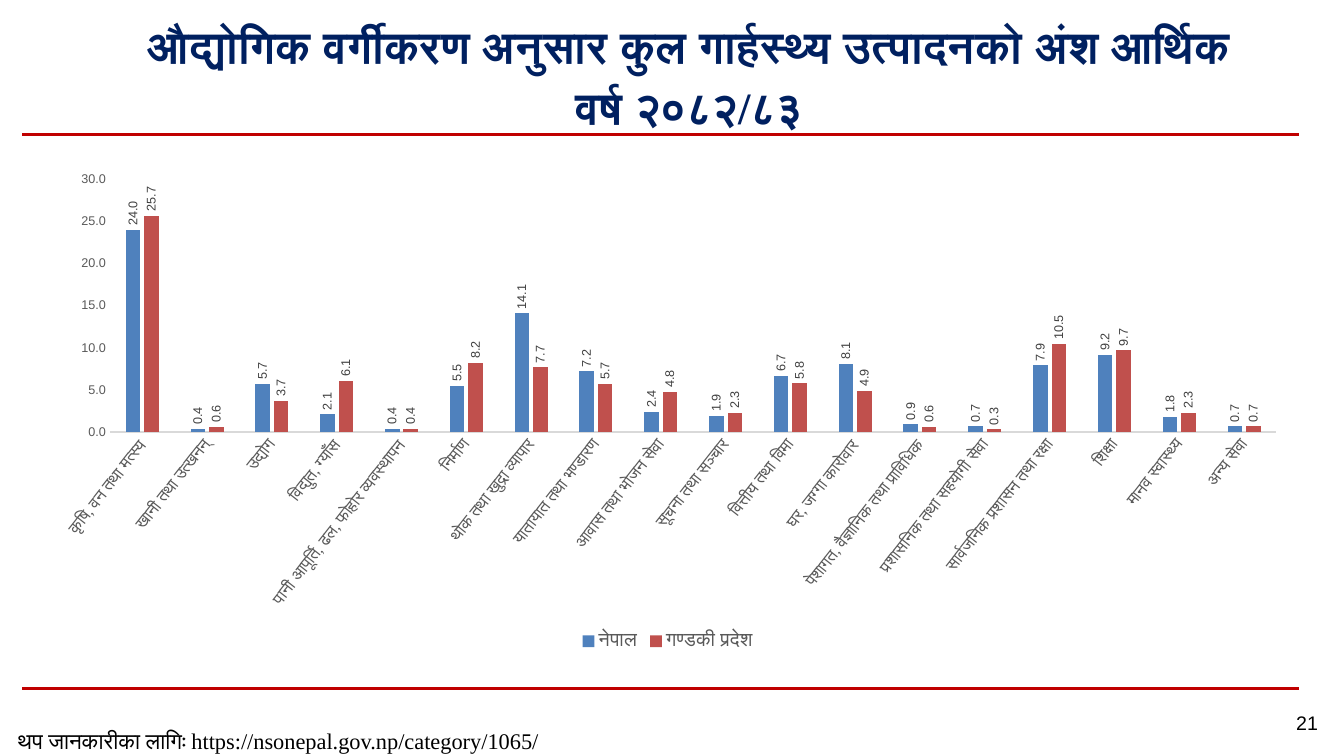
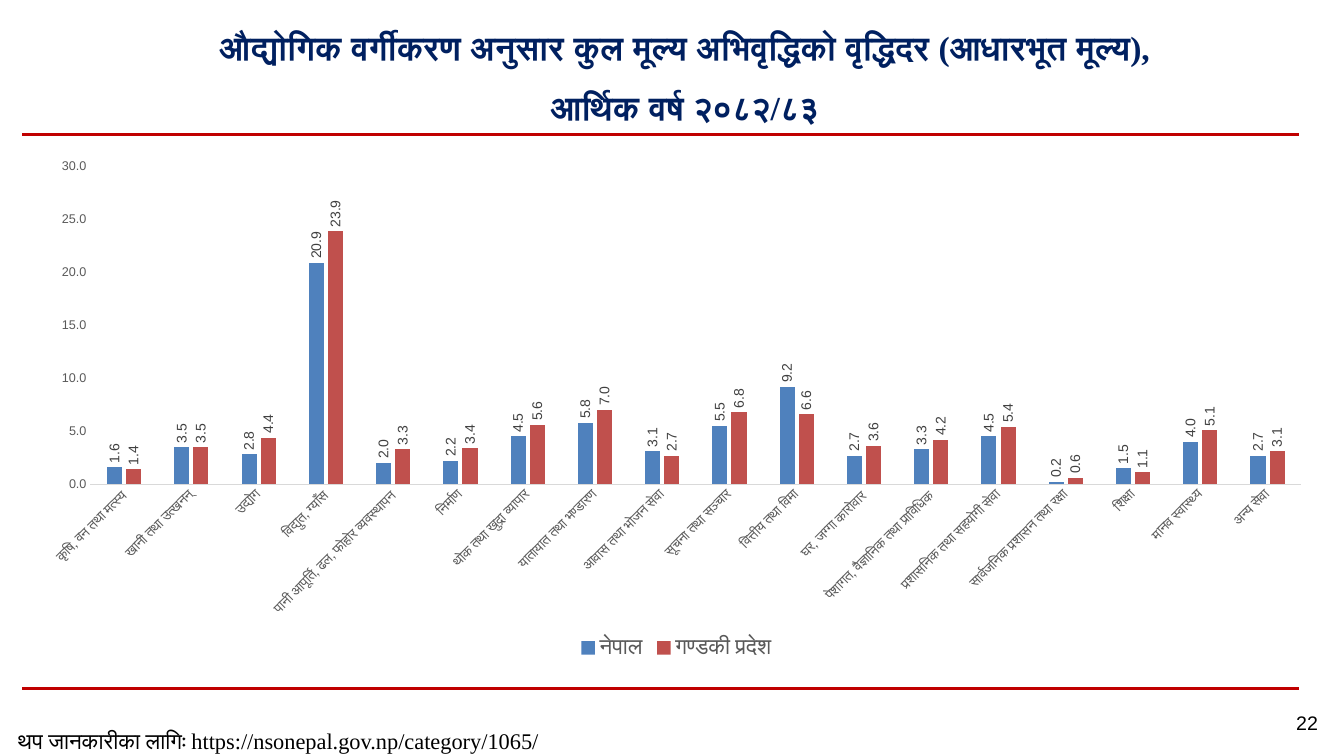
from lxml import etree
from pptx import Presentation
from pptx.chart.data import CategoryChartData
from pptx.dml.color import RGBColor
from pptx.enum.chart import XL_CHART_TYPE, XL_LABEL_POSITION, XL_LEGEND_POSITION, XL_TICK_MARK
from pptx.enum.shapes import MSO_CONNECTOR
from pptx.enum.text import MSO_ANCHOR, MSO_AUTO_SIZE, PP_ALIGN
from pptx.oxml.ns import qn
from pptx.util import Cm, Pt

# Enum members
COLUMN = XL_CHART_TYPE.COLUMN_CLUSTERED
OUTSIDE = XL_LABEL_POSITION.OUTSIDE_END
BOTTOM = XL_LEGEND_POSITION.BOTTOM
NO_TICK = XL_TICK_MARK.NONE
STRAIGHT = MSO_CONNECTOR.STRAIGHT
MIDDLE = MSO_ANCHOR.MIDDLE
NO_FIT = MSO_AUTO_SIZE.NONE
LEFT, CENTER = PP_ALIGN.LEFT, PP_ALIGN.CENTER

# Colours and fonts
NAVY = RGBColor(0x00, 0x20, 0x60)
RED = RGBColor(0xC0, 0x00, 0x00)
BLACK = RGBColor(0x00, 0x00, 0x00)
GREY = RGBColor(0x59, 0x59, 0x59)
DARK = RGBColor(0x40, 0x40, 0x40)
PALE = RGBColor(0xD9, 0xD9, 0xD9)
BARS = [RGBColor(0x4F, 0x81, 0xBD), RGBColor(0xC0, 0x50, 0x4D)]
SERIF, SANS, CHART = "Times New Roman", "Arial", "Calibri"

# Shared wording
NOTE = "थप जानकारीका लागिः https://nsonepal.gov.np/category/1065/"
AREAS = ["नेपाल", "गण्डकी प्रदेश"]
SECTORS = [
    "कृषि, वन तथा मत्स्य", "खानी तथा उत्खनन्", "उद्योग", "विद्युत, ग्याँस",
    "पानी आपूर्ति, ढल, फोहोर व्यवस्थापन", "निर्माण", "थोक तथा खुद्रा व्यापार",
    "यातायात तथा भण्डारण", "आवास तथा भोजन सेवा", "सूचना तथा सञ्चार",
    "वित्तीय तथा विमा", "घर, जग्गा कारोवार", "पेशागत, वैज्ञानिक तथा प्राविधिक",
    "प्रशासनिक तथा सहयोगी सेवा", "सार्वजनिक प्रशासन तथा रक्षा", "शिक्षा",
    "मानव स्वास्थ्य", "अन्य सेवा",
]

# Sector shares and growth rates, one row per area
SHARES = [
    [24, 0.4, 5.7, 2.1, 0.4, 5.5, 14.1, 7.2, 2.4,
     1.9, 6.7, 8.1, 0.9, 0.7, 7.9, 9.2, 1.8, 0.7],
    [25.7, 0.6, 3.7, 6.1, 0.4, 8.2, 7.7, 5.7, 4.8,
     2.3, 5.8, 4.9, 0.6, 0.3, 10.5, 9.7, 2.3, 0.7],
]
GROWTH = [
    [1.6, 3.5, 2.8, 20.9, 2, 2.2, 4.5, 5.8, 3.1,
     5.5, 9.2, 2.7, 3.3, 4.5, 0.2, 1.5, 4, 2.7],
    [1.4, 3.5, 4.4, 23.9, 3.3, 3.4, 5.6, 7, 2.7,
     6.8, 6.6, 3.6, 4.2, 5.4, 0.6, 1.1, 5.1, 3.1],
]


def style(font, size, name, color, bold=False):
    font.size, font.name, font.bold = Pt(size), name, bold
    font.color.rgb = color


def turn(root, query, angle):
    """Rotate the chart text whose body properties match the query."""
    for body in root.xpath(query):
        body.set("rot", str(angle * 60000))
        body.set("vert", "horz")


def frame(root, box):
    """Fix the inner plot area as fractions of the chart."""
    area = root.xpath("c:chart/c:plotArea")[0]
    for old in area.findall(qn("c:layout")):
        area.remove(old)
    layout = etree.Element(qn("c:layout"))
    area.insert(0, layout)
    manual = etree.SubElement(layout, qn("c:manualLayout"))
    marks = [("layoutTarget", "inner"), ("xMode", "edge"), ("yMode", "edge")]
    for tag, val in marks + list(zip("xywh", box)):
        etree.SubElement(manual, qn("c:" + tag)).set("val", str(val))


class Deck:
    def __init__(self):
        self.prs = Presentation()
        self.prs.slide_width, self.prs.slide_height = Cm(33.87), Cm(19.05)
        self.slide = None

    def page(self, number):
        """Start a slide with its rules, number and source note."""
        self.slide = self.prs.slides.add_slide(self.prs.slide_layouts[5])
        for y in (3.39, 17.35):
            self.rule(y)
        self.label((32.18, 17.78, 1.52, 0.85), str(number), 14, SANS, CENTER)
        self.label((0.21, 18.2, 15.66, 0.85), NOTE, 16, SERIF, LEFT)

    def rule(self, y):
        line = self.slide.shapes.add_connector(
            STRAIGHT, Cm(0.56), Cm(y), Cm(32.74), Cm(y))
        line.line.color.rgb, line.line.width = RED, Pt(1.5)
        etree.SubElement(line.element.spPr, qn("a:effectLst"))

    def label(self, box, text, size, name, align):
        frame = self.slide.shapes.add_textbox(*map(Cm, box)).text_frame
        frame.word_wrap = True
        para = frame.paragraphs[0]
        para.alignment = align
        run = para.add_run()
        run.text = text
        style(run.font, size, name, BLACK)

    def title(self, box, lines, size, space):
        head = self.slide.shapes.title
        head.left, head.top, head.width, head.height = map(Cm, box)
        text = head.text_frame
        text.word_wrap, text.auto_size = True, NO_FIT
        text.vertical_anchor = MIDDLE
        para = text.paragraphs[0]
        para.alignment, para.line_spacing = CENTER, space
        for i, line in enumerate(lines):
            if i:
                para.add_line_break()
            run = para.add_run()
            run.text = line
            style(run.font, size, SERIF, NAVY, True)

    def chart(self, box, rows, plot_box, angle, cat_size, tag_size, key_size):
        data = CategoryChartData(number_format="0.0")
        data.categories = SECTORS
        for area, row in zip(AREAS, rows):
            data.add_series(area, row)
        chart = self.slide.shapes.add_chart(COLUMN, *map(Cm, box), data).chart
        style(chart.font, 10, CHART, BLACK)
        chart.has_title = False

        # Legend
        chart.has_legend = True
        chart.legend.position = BOTTOM
        chart.legend.include_in_layout = False
        style(chart.legend.font, key_size, CHART, GREY)

        # Axes
        cat, val = chart.category_axis, chart.value_axis
        for axis in (cat, val):
            axis.has_major_gridlines = False
            axis.major_tick_mark = axis.minor_tick_mark = NO_TICK
        style(cat.tick_labels.font, cat_size, CHART, GREY)
        cat.format.line.color.rgb, cat.format.line.width = PALE, Pt(0.75)
        style(val.tick_labels.font, 9, SANS, GREY)
        val.tick_labels.number_format = "0.0"
        val.tick_labels.number_format_is_linked = False
        val.format.line.fill.background()
        val.minimum_scale, val.maximum_scale, val.major_unit = 0, 30, 5

        # Columns and values
        plot = chart.plots[0]
        plot.gap_width, plot.overlap = 219, -27
        plot.vary_by_categories = False
        for bars, color in zip(plot.series, BARS):
            bars.format.fill.solid()
            bars.format.fill.fore_color.rgb = color
            tags = bars.data_labels
            tags.show_value, tags.position = True, OUTSIDE
            tags.number_format, tags.number_format_is_linked = "0.0", False
            style(tags.font, tag_size, SANS, DARK)

        root = chart.element
        turn(root, ".//c:catAx/c:txPr/a:bodyPr", angle)
        turn(root, ".//c:ser/c:dLbls/c:txPr/a:bodyPr", -90)
        frame(root, plot_box)


def main():
    deck = Deck()

    # Share of output by sector
    deck.page(21)
    deck.title((3.39, 0.85, 27.94, 1.95),
               ["औद्योगिक वर्गीकरण अनुसार कुल गार्हस्थ्य उत्पादनको अंश आर्थिक वर्ष २०८२/८३"],
               32, 1.14)
    deck.chart((0.85, 4.02, 31.96, 12.49), SHARES,
               (0.06, 0.04, 0.92, 0.51), -52, 12, 9, 14)

    # Growth by sector
    deck.page(22)
    deck.title((3.18, 0.21, 28.15, 2.96),
               ["औद्योगिक वर्गीकरण अनुसार कुल मूल्य अभिवृद्धिको वृद्धिदर (आधारभूत मूल्य),",
                "आर्थिक वर्ष २०८२/८३"], 24, 1.5)
    deck.chart((0.64, 3.81, 32.81, 12.91), GROWTH,
               (0.05, 0.03, 0.93, 0.62), -45, 10, 10, 16)

    deck.prs.save("out.pptx")


if __name__ == "__main__":
    main()
